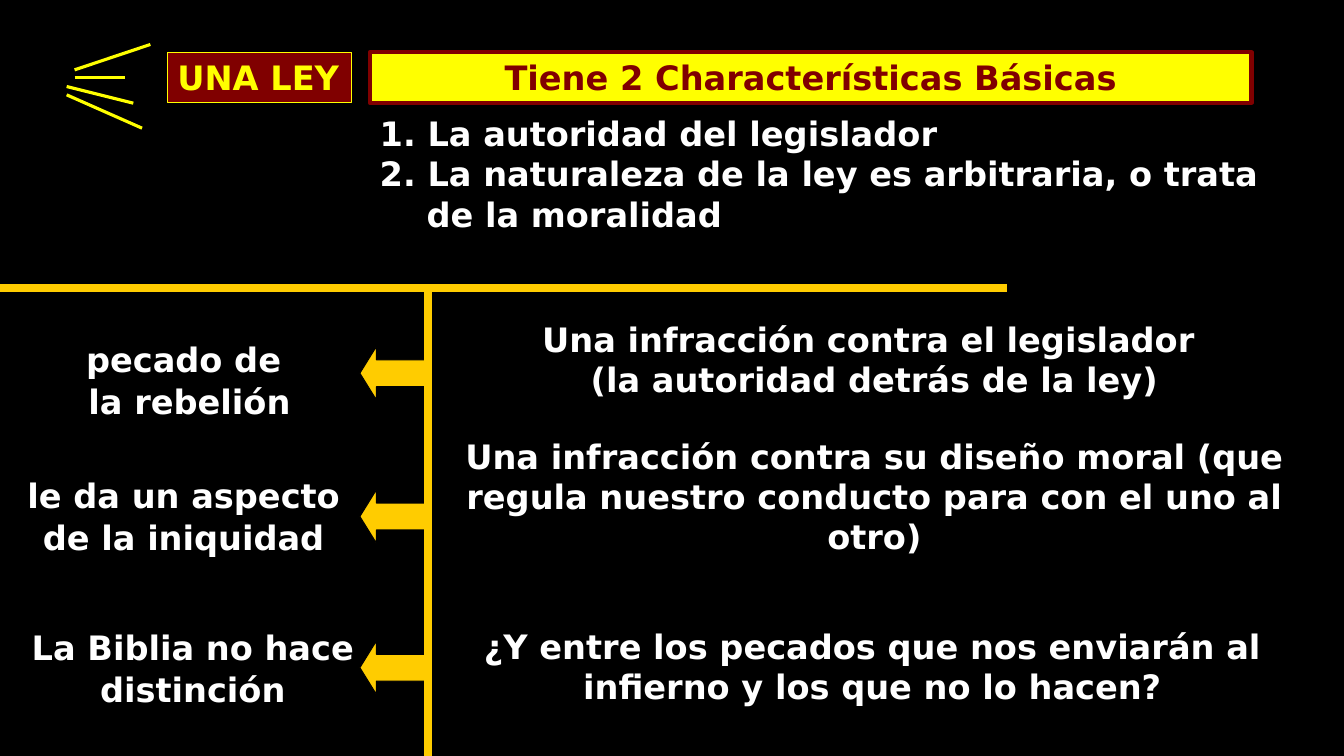
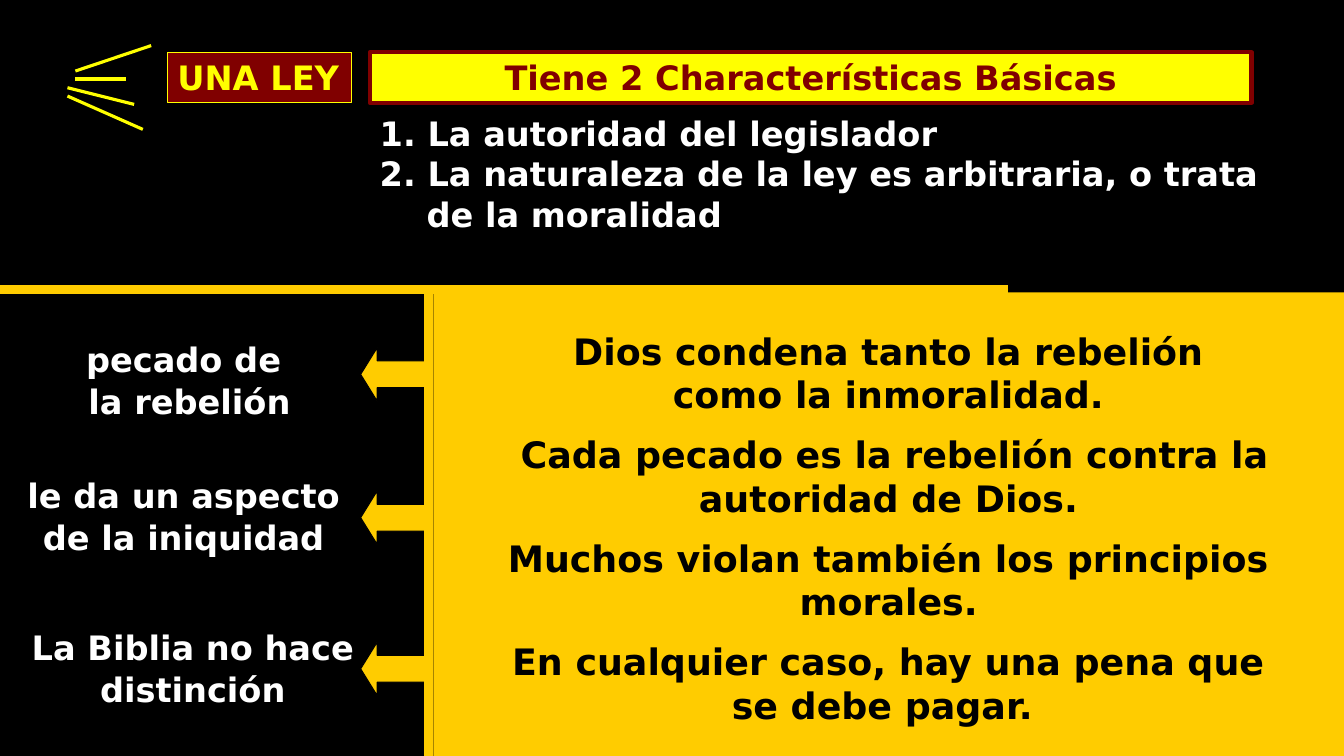
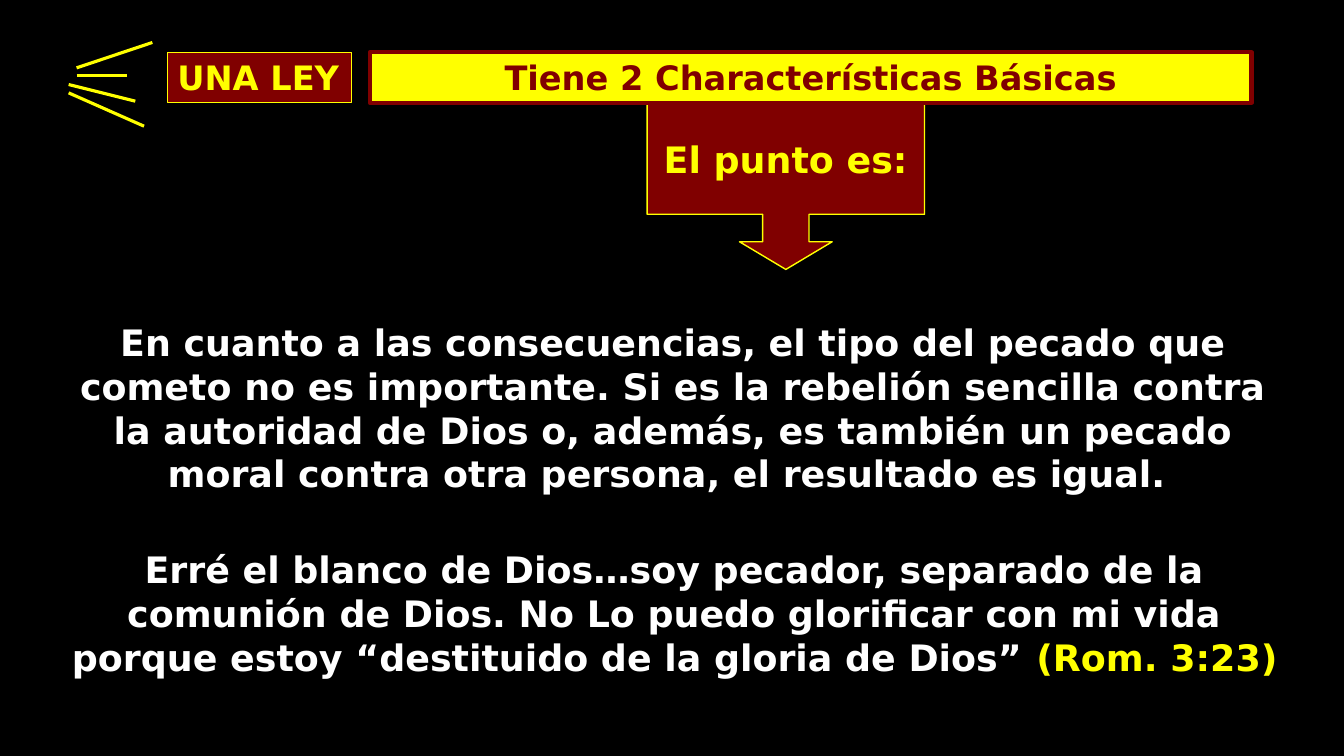
from dataclasses import dataclass

from lxml import etree
from pptx import Presentation
from pptx.dml.color import RGBColor
from pptx.enum.shapes import MSO_CONNECTOR, MSO_SHAPE
from pptx.enum.text import MSO_ANCHOR, MSO_AUTO_SIZE, PP_ALIGN
from pptx.oxml.ns import qn
from pptx.util import Cm, Pt

RECTANGLE = MSO_SHAPE.RECTANGLE
LEFT_ARROW = MSO_SHAPE.LEFT_ARROW
CALLOUT = MSO_SHAPE.DOWN_ARROW_CALLOUT
STRAIGHT = MSO_CONNECTOR.STRAIGHT
TOP, MIDDLE = MSO_ANCHOR.TOP, MSO_ANCHOR.MIDDLE
LEFT, CENTER = PP_ALIGN.LEFT, PP_ALIGN.CENTER
GROW, FIXED = MSO_AUTO_SIZE.SHAPE_TO_FIT_TEXT, MSO_AUTO_SIZE.NONE

FONT = "DejaVu Sans"
BLACK, WHITE = "000000", "FFFFFF"
YELLOW, MAROON, GOLD = "FFFF00", "800000", "FFCC00"
RULE_WEIGHT = 6


@dataclass
class Box:
    left: float
    top: float
    width: float
    height: float

    def inner(self, left, top, width, height):
        return Box(self.left + left, self.top + top, width, height)

    def lengths(self):
        return Cm(self.left), Cm(self.top), Cm(self.width), Cm(self.height)


HEADER = Box(4.22, 1.32, 27.32, 1.27)
RAYS = [
    (0.2, 0.64, 2.11, 0),
    (0, 1.27, 1.9, 2.11),
    (0.2, 0.84, 1.47, 0.84),
    (0, 1.06, 1.68, 1.48),
]
ARROW_TOPS = [1.47, 5.08, 8.89]
VERDICTS = [
    (Box(0.56, 8.36, 8.43, 2.31), ["pecado de ", "la rebelión"]),
    (Box(0.2, 11.79, 8.86, 2.31), ["le da un aspecto de la iniquidad"]),
    (Box(0.43, 15.62, 8.86, 2.31), ["La Biblia no hace distinción"]),
]
OFFENCES = [
    (Box(10.62, 7.9, 22.83, 2.31),
     ["Una infracción contra el legislador ", "(la autoridad detrás de la ley)"]),
    (Box(10.62, 10.85, 22.83, 3.33),
     ["Una infracción contra su diseño moral (que regula nuestro conducto "
      "para con el uno al otro)"]),
    (Box(10.54, 15.65, 22.89, 2.31),
     ["¿Y entre los pecados que nos enviarán al infierno y los que no lo hacen?"]),
]
CONCLUSIONS = [
    ("Dios condena tanto la rebelión", "como la inmoralidad."),
    (" Cada pecado es la rebelión contra la", "autoridad de Dios."),
    ("Muchos violan también los principios", "morales."),
    ("En cualquier caso, hay una pena que", "se debe pagar. "),
]


def colour(value):
    return RGBColor.from_string(value)


def write(shape, lines, color=WHITE, size=24, align=CENTER, anchor=TOP, wrap=True,
          fit=GROW, spacing=None, hanging=0, gap=0, gap_every=1):
    frame = shape.text_frame
    frame.word_wrap = wrap
    frame.auto_size = fit
    frame.vertical_anchor = anchor
    for index, line in enumerate(lines):
        para = frame.paragraphs[0] if index == 0 else frame.add_paragraph()
        para.alignment = align
        if spacing:
            para.line_spacing = spacing
        if gap and index and index % gap_every == 0:
            para.space_before = Pt(gap)
        if hanging:
            properties = para._p.get_or_add_pPr()
            properties.set("marL", str(Cm(hanging)))
            properties.set("indent", str(-Cm(hanging)))
        spans = [(line, color)] if isinstance(line, str) else line
        for text, span_color in spans:
            span = para.add_run()
            span.text = text
            span.font.name = FONT
            span.font.size = Pt(size)
            span.font.bold = True
            span.font.color.rgb = colour(span_color)


def add_text(page, box, lines, **formats):
    write(page.shapes.add_textbox(*box.lengths()), lines, **formats)


def add_block(page, kind, box, fill, line=None, weight=0.75, adjustments=()):
    shape = page.shapes.add_shape(kind, *box.lengths())
    shape.shadow.inherit = False
    shape.fill.solid()
    shape.fill.fore_color.rgb = colour(fill)
    if line:
        shape.line.color.rgb = colour(line)
        shape.line.width = Pt(weight)
    else:
        shape.line.fill.background()
    for index, value in enumerate(adjustments):
        shape.adjustments[index] = value
    return shape


def add_line(page, start, end, color, weight):
    ends = [Cm(value) for value in (*start, *end)]
    line = page.shapes.add_connector(STRAIGHT, *ends)
    line.line.color.rgb = colour(color)
    line.line.width = Pt(weight)
    etree.SubElement(line._element.spPr, qn("a:effectLst"))


def add_rays(page, left, top):
    for x1, y1, x2, y2 in RAYS:
        add_line(page, (left + x1, top + y1), (left + x2, top + y2), YELLOW, 2.25)


def add_header(page, box):
    label = add_block(page, RECTANGLE, box.inner(0, 0, 4.65, box.height), MAROON, YELLOW)
    write(label, ["UNA LEY"], color=YELLOW, align=LEFT, wrap=False)
    title_box = box.inner(5.1, 0, box.width - 5.1, box.height)
    title = add_block(page, RECTANGLE, title_box, YELLOW, MAROON, weight=3)
    write(title, ["Tiene 2 Characterísticas Básicas"], color=MAROON)


def add_traits(page, box):
    add_text(page, box, [
        "1. La autoridad del legislador",
        "2. La naturaleza de la ley es arbitraria, o trata de la moralidad",
    ], align=LEFT, hanging=1.18)


def add_divider(page, box):
    for top in ARROW_TOPS:
        add_block(page, LEFT_ARROW, box.inner(9.09, top, 1.7, 1.35), GOLD, BLACK,
                  adjustments=(0.5, 0.31))
    post = box.left + 10.8
    add_line(page, (box.left, box.top), (box.left + box.width, box.top), GOLD, RULE_WEIGHT)
    add_line(page, (post, box.top), (post, box.top + box.height), GOLD, RULE_WEIGHT)


def add_statements(page, statements, **formats):
    for box, lines in statements:
        add_text(page, box, lines, **formats)


def add_law_parts(page):
    add_header(page, HEADER)
    add_traits(page, Box(9.32, 2.72, 23.85, 3.33))
    add_statements(page, VERDICTS, spacing=1.05)


def build_offences(page):
    add_rays(page, 1.68, 1.12)
    add_statements(page, OFFENCES)
    add_divider(page, Box(-0.02, 7.26, 25.4, 11.8))
    add_law_parts(page)


def build_conclusions(page):
    add_rays(page, 1.7, 1.15)
    add_divider(page, Box(0, 7.29, 25.4, 11.8))
    panel = add_block(page, RECTANGLE, Box(10.92, 7.37, 22.96, 11.86), GOLD)
    lines = [line for pair in CONCLUSIONS for line in pair]
    write(panel, lines, color=BLACK, size=26, anchor=MIDDLE, wrap=False, fit=FIXED,
          gap=11.6, gap_every=2)
    add_law_parts(page)


def build_point(page):
    add_rays(page, 1.73, 1.07)
    add_text(page, Box(1.42, 7.95, 31.12, 4.7), [
        "En cuanto a las consecuencias, el tipo del pecado que cometo no es importante. "
        "Si es la rebelión sencilla contra la autoridad de Dios o, además, es también "
        "un pecado moral contra otra persona, el resultado es igual. ",
    ], size=26)
    callout = add_block(page, CALLOUT, Box(16.31, 2.62, 6.99, 4.17), MAROON, YELLOW,
                        weight=1, adjustments=(0.28, 0.28, 0.167, 0.667))
    write(callout, ["El punto es:"], color=YELLOW, size=26, anchor=MIDDLE, wrap=False,
          fit=FIXED)
    add_text(page, Box(1.45, 13.67, 31.12, 3.58), [[
        ("Erré el blanco de Dios…soy pecador, separado de la comunión de Dios. "
         "No Lo puedo glorificar con mi vida porque estoy “destituido de la gloria "
         "de Dios”", WHITE),
        (" (Rom. 3:23)", YELLOW),
    ]], size=26)
    add_header(page, HEADER)


def main():
    deck = Presentation()
    deck.slide_width, deck.slide_height = Cm(33.87), Cm(19.05)
    backdrop = deck.slide_master.background.fill
    backdrop.solid()
    backdrop.fore_color.rgb = colour(BLACK)
    for build in (build_offences, build_conclusions, build_point):
        build(deck.slides.add_slide(deck.slide_layouts[6]))
    deck.save("out.pptx")


if __name__ == "__main__":
    main()
